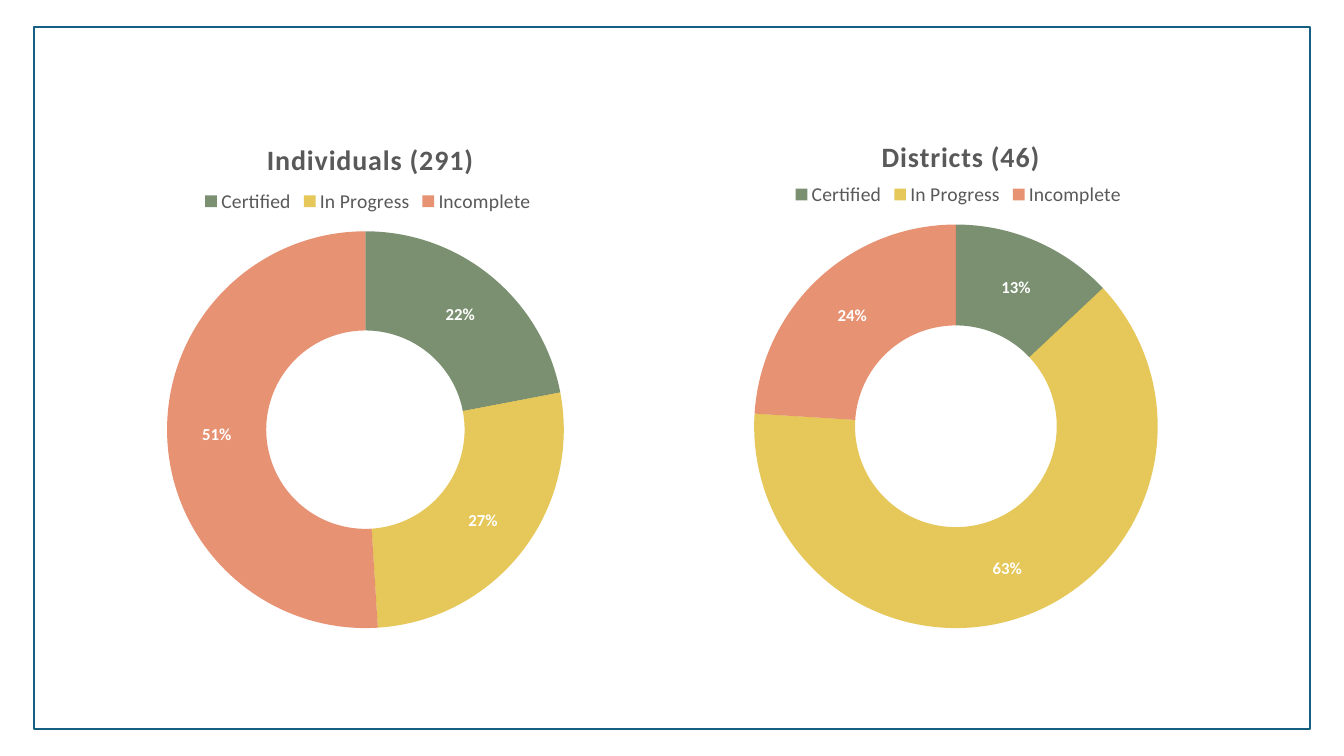
from dataclasses import dataclass
from typing import Any

from lxml import etree
from pptx import Presentation
from pptx import util as u
from pptx.chart.data import CategoryChartData
from pptx.dml.color import RGBColor
from pptx.enum import chart as ch, shapes
from pptx.oxml import ns

COLORS = {
    "Certified": "335525",
    "In Progress": "DAAA00",
    "Incomplete": "DC582A",
    "frame": "156082",
    "text": "595959",
    "label": "FFFFFF",
}
STATES = ("Certified", "In Progress", "Incomplete")
OPACITY = "65000"
TOP, HEIGHT = 2.79, 13.39
KEY_WIDTH = 8.4
FORMATS = {
    "title": {"name": "Calibri", "size": u.Pt(20), "bold": True},
    "legend": {"name": "Calibri", "size": u.Pt(14), "bold": False},
    "label": {"name": "Calibri", "size": u.Pt(12), "bold": True},
}


@dataclass(frozen=True)
class Donut:
    """One chart; lengths in cm, tops measured from the slide's top."""
    title: str
    shares: tuple[int, ...]
    left: float
    width: float
    title_width: float
    title_top: float
    key_top: float
    ring_top: float
    ring_size: float


DONUTS = (
    Donut("Individuals (291)", (22, 27, 51), 0.94, 16.54, 5.22, 3.4, 4.67, 5.83, 10.0),
    Donut("Districts (46)", (13, 63, 24), 15.39, 17.4, 4.0, 3.33, 4.5, 5.66, 10.17),
)


def style(font: Any, kind: str, color: str) -> None:
    for key, value in FORMATS[kind].items():
        setattr(font, key, value)
    font.color.rgb = RGBColor.from_string(COLORS[color])


def place(node: Any, index: int, values: dict[str, float], inner: bool = False) -> None:
    """Give a chart part a manual layout, in fractions of the chart."""
    for old in node.findall(ns.qn("c:layout")):
        node.remove(old)
    layout = etree.Element(ns.qn("c:layout"))
    manual = etree.SubElement(layout, ns.qn("c:manualLayout"))
    fields = {"layoutTarget": "inner"} if inner else {}
    fields |= {"xMode": "edge", "yMode": "edge"}
    fields |= {key: f"{value:.4f}" for key, value in values.items()}
    for key, value in fields.items():
        etree.SubElement(manual, ns.qn(f"c:{key}")).set("val", value)
    node.insert(index, layout)


def arrange(chart: Any, donut: Donut) -> None:
    """Centre title, legend and ring across the chart."""
    def spot(width: float, top: float) -> dict[str, float]:
        return {"x": (1 - width / donut.width) / 2, "y": (top - TOP) / HEIGHT}

    title, key, area = (chart.element.xpath(f"c:chart/c:{tag}")[0]
                        for tag in ("title", "legend", "plotArea"))
    place(title, 1, spot(donut.title_width, donut.title_top))
    place(key, 1, spot(KEY_WIDTH, donut.key_top))
    size = {"w": donut.ring_size / donut.width, "h": donut.ring_size / HEIGHT}
    place(area, 0, spot(donut.ring_size, donut.ring_top) | size, inner=True)


def draw(slide: Any, donut: Donut) -> None:
    data = CategoryChartData()
    data.categories = STATES
    data.add_series("Series 1", donut.shares)
    box = (u.Cm(n) for n in (donut.left, TOP, donut.width, HEIGHT))
    chart = slide.shapes.add_chart(ch.XL_CHART_TYPE.DOUGHNUT, *box, data).chart
    chart.font.name, chart.font.size = "Arial", u.Pt(10)

    chart.has_title = True
    line = chart.chart_title.text_frame.paragraphs[0]
    run = line.add_run()
    run.text = donut.title
    style(run.font, "title", "text")
    for props in chart.element.xpath("c:chart/c:title//a:rPr"):
        props.set("spc", "50")

    chart.has_legend = True
    chart.legend.position = ch.XL_LEGEND_POSITION.TOP
    chart.legend.include_in_layout = False
    style(chart.legend.font, "legend", "text")

    plot = chart.plots[0]
    plot.vary_by_categories = True
    plot.has_data_labels = True
    labels = plot.data_labels
    labels.show_value, labels.show_percentage = False, True
    labels.number_format, labels.number_format_is_linked = "0%", False
    style(labels.font, "label", "label")

    for index, state in enumerate(STATES):
        form = plot.series[0].points[index].format
        form.fill.solid()
        form.fill.fore_color.rgb = RGBColor.from_string(COLORS[state])
        form.line.fill.background()
    for color in chart.element.xpath(".//c:dPt//a:srgbClr"):
        etree.SubElement(color, ns.qn("a:alpha")).set("val", OPACITY)
    arrange(chart, donut)


def main() -> None:
    deck = Presentation()
    deck.slide_width, deck.slide_height = u.Cm(33.87), u.Cm(19.05)
    slide = deck.slides.add_slide(deck.slide_layouts[6])
    box = (u.Cm(n) for n in (0.85, 0.69, 32.16, 17.68))
    frame = slide.shapes.add_shape(shapes.MSO_SHAPE.RECTANGLE, *box)
    frame.shadow.inherit = False
    frame.fill.background()
    frame.line.color.rgb = RGBColor.from_string(COLORS["frame"])
    frame.line.width = u.Pt(1.5)
    for donut in DONUTS:
        draw(slide, donut)
    deck.save("out.pptx")


if __name__ == "__main__":
    main()
